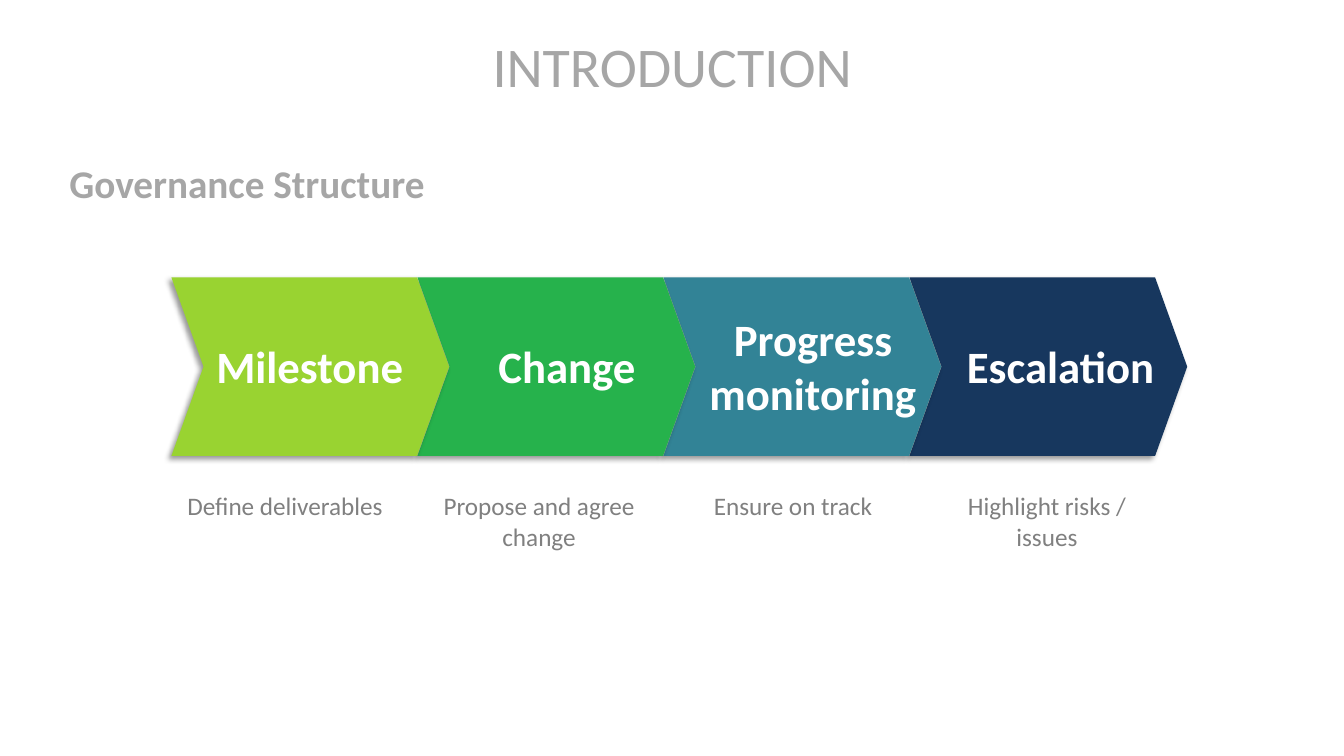
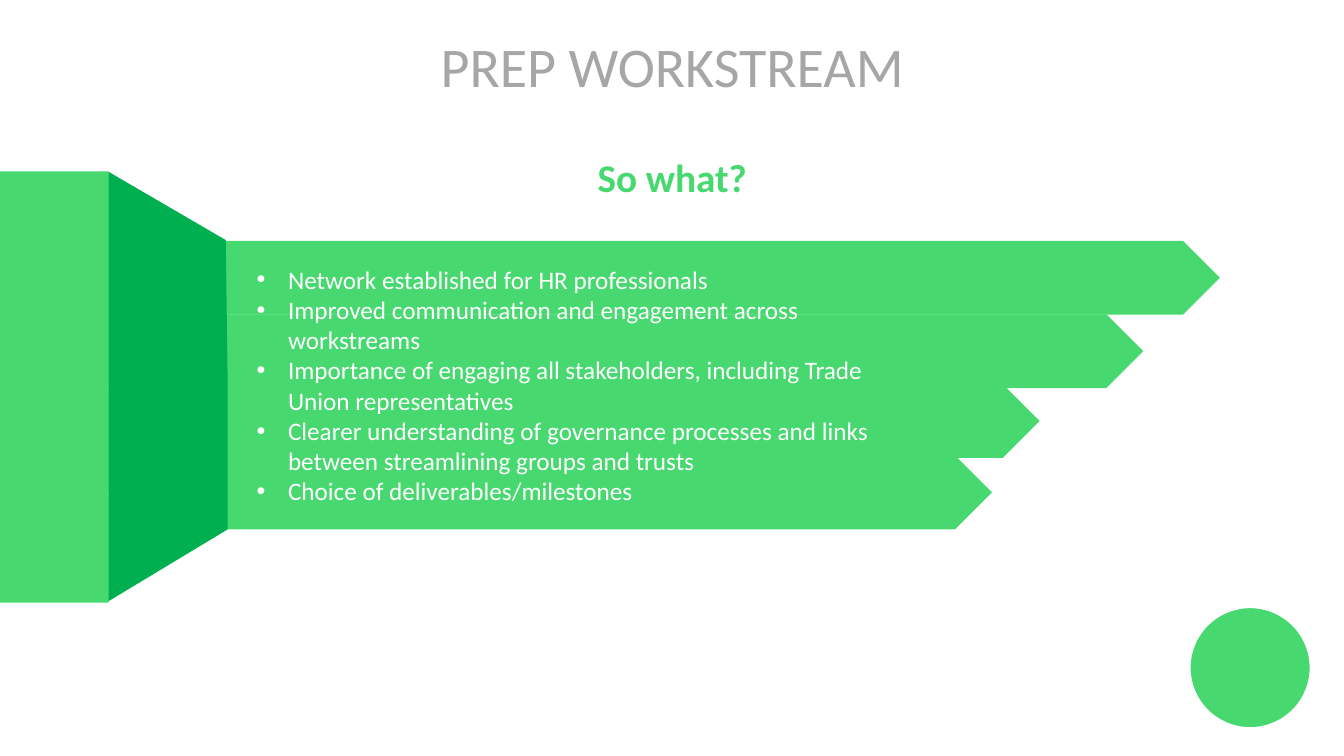
from lxml import etree
from pptx import Presentation
from pptx.dml.color import RGBColor
from pptx.enum import shapes, text
from pptx.oxml import ns
from pptx.util import Cm, Pt

COLORS = {
    "grey": "A6A6A6", "caption": "808080", "white": "FFFFFF",
    "lime": "99D331", "green": "26B24C", "teal": "328396", "navy": "17375E",
    "hand": "47D86F", "wedge": "00B050",
}
STYLES = {
    "title": {"size": Pt(40), "bold": False, "color": "grey"},
    "heading": {"size": Pt(28), "bold": True, "color": "grey"},
    "question": {"size": Pt(28), "bold": True, "color": "hand"},
    "step": {"size": Pt(32), "bold": True, "color": "white"},
    "caption": {"size": Pt(18), "bold": False, "color": "caption"},
    "bullet": {"size": Pt(18), "bold": False, "color": "white"},
}
CENTER, LEFT = text.PP_ALIGN.CENTER, text.PP_ALIGN.LEFT
TOP, MIDDLE = text.MSO_ANCHOR.TOP, text.MSO_ANCHOR.MIDDLE
CENTERED_LEFT, CENTERED_WIDTH = Cm(6.83), Cm(20.22)


def write(shape, lines, style, align=CENTER, anchor=TOP):
    """Fill a box with one formatted paragraph per line."""
    frame = shape.text_frame
    for name, value in {"word_wrap": True, "vertical_anchor": anchor,
                        "auto_size": text.MSO_AUTO_SIZE.NONE}.items():
        setattr(frame, name, value)
    for index, line in enumerate(lines):
        paragraph = frame.add_paragraph() if index else frame.paragraphs[0]
        paragraph.alignment = align
        run = paragraph.add_run()
        run.text = line
        run.font.name = "Calibri"
        for name, value in STYLES[style].items():
            if name == "color":
                run.font.color.rgb = RGBColor.from_string(COLORS[value])
            else:
                setattr(run.font, name, value)
    return frame


def paint(shape, color):
    """Give a shape a flat fill without outline or shadow."""
    shape.shadow.inherit = False
    shape.fill.solid()
    shape.fill.fore_color.rgb = RGBColor.from_string(COLORS[color])
    shape.line.fill.background()


presentation = Presentation()
presentation.slide_width, presentation.slide_height = Cm(33.87), Cm(19.05)

# Titled slides
slides = []
for heading in ("INTRODUCTION", "PREP WORKSTREAM"):
    slide = presentation.slides.add_slide(presentation.slide_layouts[5])
    title = slide.shapes.title
    title.left, title.top = CENTERED_LEFT, Cm(0.66)
    title.width, title.height = CENTERED_WIDTH, Cm(1.96)
    write(title, [heading], "title")
    slides.append(slide)
introduction, workstream = slides

# Introduction: heading
box = introduction.shapes.add_textbox(Cm(1.5), Cm(3.89), Cm(11.5), Cm(1.45))
write(box, ["Governance Structure"], "heading", LEFT)

# Introduction: chevrons, the leftmost in front
steps = [
    ("Milestone", "lime", 4.85, "Define deliverables"),
    ("Change", "green", 11.33, "Propose and agree change"),
    ("Progress monitoring", "teal", 17.53, "Ensure on track"),
    ("Escalation", "navy", 23.77, "Highlight risks / issues"),
]
for index, (label, color, label_left, caption) in reversed(list(enumerate(steps))):
    chevron = introduction.shapes.add_shape(
        shapes.MSO_SHAPE.CHEVRON, Cm(4.32 + 6.2 * index), Cm(6.99), Cm(7), Cm(4.5))
    chevron.adjustments[0] = 0.18
    paint(chevron, color)
    effects = chevron.element.spPr.find(ns.qn("a:effectLst"))
    shadow = etree.SubElement(effects, ns.qn("a:outerShdw"), {
        "blurRad": str(Pt(4)), "dist": str(Pt(3)), "dir": str(135 * 60000),
        "algn": "tr", "rotWithShape": "0"})
    black = etree.SubElement(shadow, ns.qn("a:srgbClr"), val="000000")
    etree.SubElement(black, ns.qn("a:alpha"), val="40000")

# Introduction: step names and captions
for index, (label, color, label_left, caption) in enumerate(steps):
    box = introduction.shapes.add_textbox(Cm(label_left), Cm(7.72), Cm(5.92), Cm(3))
    write(box, [label], "step", anchor=MIDDLE)
    box = introduction.shapes.add_textbox(
        Cm(4.11 + 6.4 * index), Cm(12.24), Cm(6.15), Cm(1.8))
    write(box, [caption], "caption")

# Workstream: fingers of the hand
for top, width in ((6.07, 25.27), (7.92, 23.34), (9.68, 20.73), (11.48, 19.53)):
    finger = workstream.shapes.add_shape(
        shapes.MSO_SHAPE.PENTAGON, Cm(5.47), Cm(top), Cm(width), Cm(1.86))
    paint(finger, "hand")

# Workstream: wedge and wrist blocks
builder = workstream.shapes.build_freeform(Cm(5.69), Cm(6.05))
builder.add_line_segments([(Cm(x), Cm(y)) for x, y in (
    (2.72, 4.32), (2.72, 15.16), (5.74, 13.34), (5.74, 9.75))])
paint(builder.convert_to_shape(), "wedge")
for index in range(4):
    block = workstream.shapes.add_shape(
        shapes.MSO_SHAPE.RECTANGLE, Cm(0), Cm(4.32 + 2.7 * index), Cm(2.74), Cm(2.77))
    paint(block, "hand")

# Workstream: question and bullets
box = workstream.shapes.add_textbox(CENTERED_LEFT, Cm(3.73), CENTERED_WIDTH, Cm(1.45))
write(box, ["So what?"], "question")
box = workstream.shapes.add_textbox(Cm(6.22), Cm(6.53), Cm(16.74), Cm(6.4))
frame = write(box, [
    "Network established for HR professionals",
    "Improved communication and engagement across workstreams",
    "Importance of engaging all stakeholders, including Trade Union representatives",
    "Clearer understanding of governance processes and links between "
    "streamlining groups and trusts",
    "Choice of deliverables/milestones",
], "bullet", LEFT)
for paragraph in frame.paragraphs:
    properties = paragraph._p.get_or_add_pPr()
    properties.set("marL", str(Cm(0.79)))
    properties.set("indent", str(-Cm(0.79)))
    etree.SubElement(properties, ns.qn("a:buFont"), typeface="Arial")
    etree.SubElement(properties, ns.qn("a:buChar"), char="•")

# Workstream: corner circle
circle = workstream.shapes.add_shape(
    shapes.MSO_SHAPE.OVAL, Cm(29.97), Cm(15.29), Cm(3.07), Cm(3.07))
paint(circle, "hand")
circle.line.color.rgb = RGBColor.from_string(COLORS["white"])
circle.line.width = Pt(2)

presentation.save("out.pptx")
